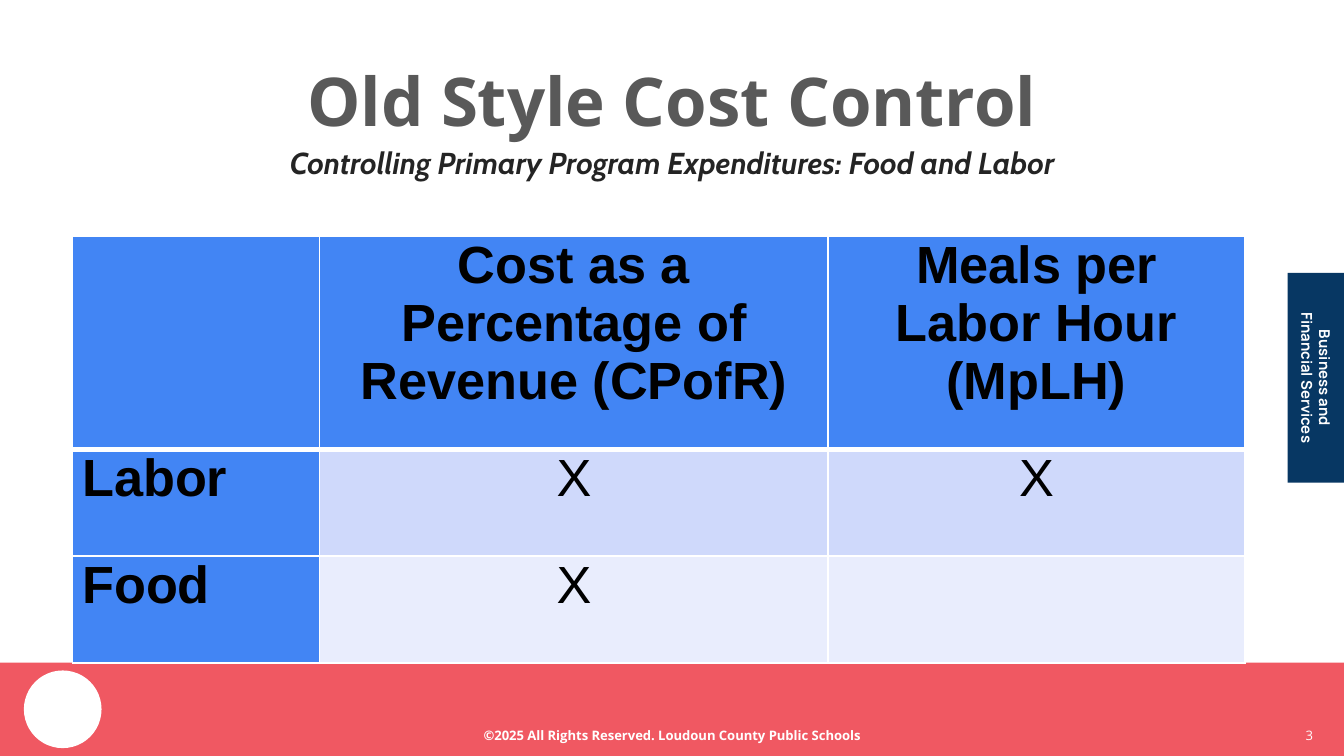
from lxml import etree
from pptx import Presentation
from pptx.dml.color import RGBColor
from pptx.enum.shapes import MSO_SHAPE as Shape
from pptx.enum.text import MSO_ANCHOR as Anchor, PP_ALIGN as Align
from pptx.oxml.ns import qn
from pptx.util import Pt

WHITE, BLUE = "FFFFFF", "4285F4"
BANDS = ["CFD9FB", "E9EDFD"]


def tint(color, code):
    color.rgb = RGBColor.from_string(code)


def style(para, font, size, code, bold=False, italic=False, align=Align.CENTER):
    para.alignment = align
    for run in para.runs:
        face = run.font
        face.name, face.size = font, Pt(size)
        face.bold, face.italic = bold, italic
        tint(face.color, code)


def block(slide, kind, box):
    return slide.shapes.add_shape(kind, *map(Pt, box))


def paint(slide, kind, box, code):
    shape = block(slide, kind, box)
    shape.shadow.inherit = False
    shape.fill.solid()
    tint(shape.fill.fore_color, code)
    shape.line.fill.background()


def label(slide, box, text, *look, anchor=Anchor.MIDDLE, **more):
    shape = slide.shapes.add_textbox(*map(Pt, box))
    frame = shape.text_frame
    frame.word_wrap = True
    frame.vertical_anchor = anchor
    frame.margin_left = frame.margin_right = Pt(7.2)
    frame.margin_top = frame.margin_bottom = Pt(7.2)
    frame.text = text
    for para in frame.paragraphs:
        style(para, *look, **more)
    return shape


def footer(slide, x, y, w, h):
    paint(slide, Shape.RECTANGLE, (x, y, w, h), "F05862")
    paint(slide, Shape.OVAL, (x + 12.8, y + 4.2, 41.6, 41.6), WHITE)
    label(slide, (x + w / 2 - 117, y + 32.3, 234, 13.6),
          "©2025 All Rights Reserved. Loudoun County Public Schools",
          "Open Sans", 7, WHITE, bold=True)
    label(slide, (x + w - 52.5, y + 23.6, 43, 31), "3",
          "Open Sans", 7, WHITE, align=Align.RIGHT)


def side_tab(slide, x, y, w, h):
    paint(slide, Shape.RECTANGLE, (x, y, w, h), "073763")
    tag_w, tag_h = 107.2, 20.2
    mid_x, mid_y = x + 22, y + h / 2
    tag = label(slide, (mid_x - tag_w / 2, mid_y - tag_h / 2, tag_w, tag_h),
                "Business and\nFinancial Services",
                "Manrope", 8, WHITE, bold=True, anchor=Anchor.TOP)
    tag.rotation = 90


def heading(slide, x, y, w):
    label(slide, (x, y, w, 66.2), "Old Style Cost Control",
          "Open Sans", 36, "595959", bold=True)
    label(slide, (x, y + 54, w, 25.2),
          "Controlling Primary Program Expenditures: Food and Labor",
          "Cabin", 16.2, "242424", bold=True, italic=True)


def edge(cell, base):
    """Draw white borders, with the given width at the bottom."""
    props = cell._tc.get_or_add_tcPr()
    for i, (side, width) in enumerate(zip("LRTB", (1, 1, 1, base))):
        line = etree.Element(qn("a:ln" + side), w=str(Pt(width)))
        fill = etree.SubElement(line, qn("a:solidFill"))
        etree.SubElement(fill, qn("a:srgbClr"), val=WHITE)
        props.insert(i, line)


def matrix(slide, x, y, cols, rows, data):
    size = sum(cols), sum(rows)
    table = slide.shapes.add_table(len(rows), len(cols),
                                   *map(Pt, (x, y, *size))).table
    for col, width in zip(table.columns, cols):
        col.width = Pt(width)
    for r, (row, height) in enumerate(zip(table.rows, rows)):
        row.height = Pt(height)
        for c, cell in enumerate(row.cells):
            head = r == 0 or c == 0
            cell.margin_left = cell.margin_right = Pt(5.2)
            cell.margin_top = cell.margin_bottom = 0
            cell.fill.solid()
            tint(cell.fill.fore_color, BLUE if head else BANDS[r - 1])
            edge(cell, 3 if r == 0 else 1)
            cell.text = data[r][c]
            para = cell.text_frame.paragraphs[0]
            para.space_after = Pt(12)
            style(para, "Arial", 28, "000000", bold=head,
                  align=Align.CENTER if c else Align.LEFT)


def main():
    deck = Presentation()
    deck.slide_width, deck.slide_height = Pt(720), Pt(405)
    slide = deck.slides.add_slide(deck.slide_layouts[6])
    footer(slide, 0, 355, 720, 50)
    side_tab(slide, 689.8, 146.2, 66.2, 112.4)
    heading(slide, 24.5, 20.2, 671)
    matrix(slide, 38.9, 126.5, [132.4, 272.4, 223.2], [114.2, 57.2, 57.2], [
        ["", "Cost as a Percentage of Revenue (CPofR)",
         "Meals per Labor Hour (MpLH)"],
        ["Labor", "X", "X"],
        ["Food", "X", ""],
    ])
    deck.save("out.pptx")


if __name__ == "__main__":
    main()
